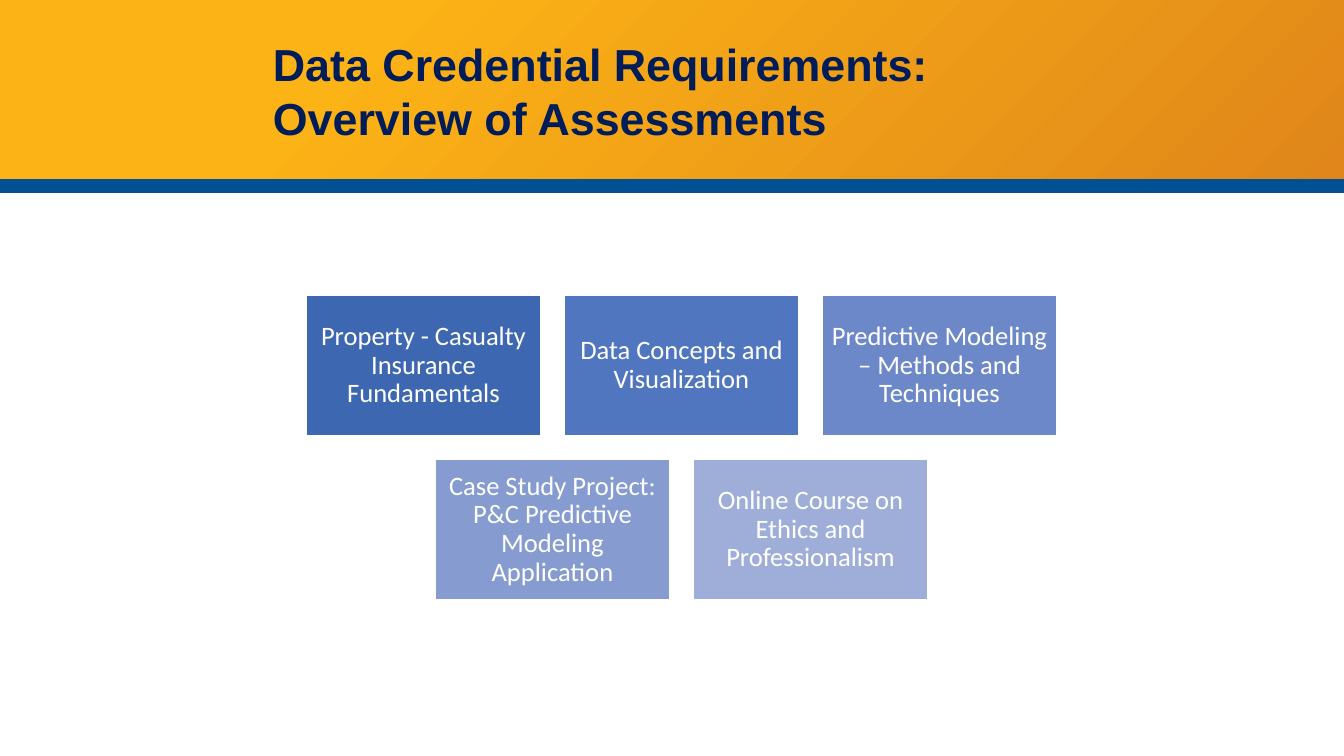
from dataclasses import dataclass

from lxml import etree
from pptx import Presentation
from pptx.dml.color import RGBColor
from pptx.enum.shapes import MSO_CONNECTOR, MSO_SHAPE
from pptx.enum.text import MSO_ANCHOR, PP_ALIGN
from pptx.oxml.ns import qn
from pptx.util import Pt

RECTANGLE = MSO_SHAPE.RECTANGLE
STRAIGHT = MSO_CONNECTOR.STRAIGHT
MIDDLE = MSO_ANCHOR.MIDDLE
CENTER = PP_ALIGN.CENTER

EMU_PER_PX = 914400 / 100.8
PAGE_WIDTH, PAGE_HEIGHT = 1344, 756
BANNER_HEIGHT = 186


def px(length):
    return round(length * EMU_PER_PX)


@dataclass(frozen=True)
class Theme:
    banner_start: str = "FCB315"
    banner_end: str = "E0861A"
    rule: str = "005093"
    title: str = "001C59"
    white: str = "FFFFFF"
    title_font: str = "Arial"
    card_font: str = "Calibri"
    title_size: int = 32
    card_size: int = 19
    rule_width: int = 10


class PageBuilder:
    def __init__(self, page, theme):
        self.page = page
        self.theme = theme

    def rectangle(self, left, top, width, height):
        box = self.page.shapes.add_shape(
            RECTANGLE, px(left), px(top), px(width), px(height))
        box.shadow.inherit = False
        return box

    def style_font(self, font, name, size, color, bold=False):
        font.name = name
        font.size = Pt(size)
        font.bold = bold
        font.color.rgb = RGBColor.from_string(color)

    def banner(self, width, height):
        box = self.rectangle(0, 0, width, height)
        box.line.fill.background()
        box.fill.gradient()
        box.fill.gradient_angle = 315
        first, last = box.fill.gradient_stops
        first.position, last.position = 0.26, 1
        first.color.rgb = RGBColor.from_string(self.theme.banner_start)
        last.color.rgb = RGBColor.from_string(self.theme.banner_end)

    def rule(self, width, top):
        line = self.page.shapes.add_connector(
            STRAIGHT, 0, px(top), px(width), px(top))
        line.line.color.rgb = RGBColor.from_string(self.theme.rule)
        line.line.width = Pt(self.theme.rule_width)
        etree.SubElement(line._element.spPr, qn("a:effectLst"))

    def title(self, lines, left, top, width, height):
        box = self.page.shapes.add_textbox(
            px(left), px(top), px(width), px(height))
        frame = box.text_frame
        frame.word_wrap = True
        frame.vertical_anchor = MIDDLE
        frame.text = "\n".join(lines)
        for para in frame.paragraphs:
            self.style_font(para.font, self.theme.title_font,
                            self.theme.title_size, self.theme.title, bold=True)

    def card(self, text, color, left, top, width, height):
        box = self.rectangle(left, top, width, height)
        box.fill.solid()
        box.fill.fore_color.rgb = RGBColor.from_string(color)
        box.line.color.rgb = RGBColor.from_string(self.theme.white)
        box.line.width = Pt(1)
        frame = box.text_frame
        frame.word_wrap = True
        frame.vertical_anchor = MIDDLE
        frame.margin_left = frame.margin_right = px(8)
        frame.margin_top = frame.margin_bottom = px(8)
        para = frame.paragraphs[0]
        para.text = text
        para.alignment = CENTER
        para.line_spacing = 0.9
        self.style_font(para.font, self.theme.card_font,
                        self.theme.card_size, self.theme.white)


# Assessments by row, each with its card colour
ASSESSMENT_ROWS = [
    [("Property - Casualty Insurance Fundamentals", "3E67B2"),
     ("Data Concepts and Visualization", "5176C0"),
     ("Predictive Modeling – Methods and Techniques", "6C88C8")],
    [("Case Study Project: P&C Predictive Modeling Application", "869BD0"),
     ("Online Course on Ethics and Professionalism", "9FAED8")],
]
CARD_WIDTH, CARD_HEIGHT, CARD_GAP = 235, 141, 23
CARDS_CENTER, CARDS_TOP = 681, 295


def main():
    deck = Presentation()
    deck.slide_width, deck.slide_height = px(PAGE_WIDTH), px(PAGE_HEIGHT)
    page = deck.slides.add_slide(deck.slide_layouts[6])
    builder = PageBuilder(page, Theme())

    # Header
    builder.banner(PAGE_WIDTH, BANNER_HEIGHT)
    builder.rule(PAGE_WIDTH, BANNER_HEIGHT)
    builder.title(["Data Credential Requirements:", "Overview of Assessments"],
                  263, 32, 836, 117)

    # Assessment cards, each row centred
    for row, assessments in enumerate(ASSESSMENT_ROWS):
        count = len(assessments)
        row_width = count * CARD_WIDTH + (count - 1) * CARD_GAP
        row_left = CARDS_CENTER - row_width // 2
        top = CARDS_TOP + row * (CARD_HEIGHT + CARD_GAP)
        for column, (text, color) in enumerate(assessments):
            left = row_left + column * (CARD_WIDTH + CARD_GAP)
            builder.card(text, color, left, top, CARD_WIDTH, CARD_HEIGHT)

    deck.save("out.pptx")


if __name__ == "__main__":
    main()
